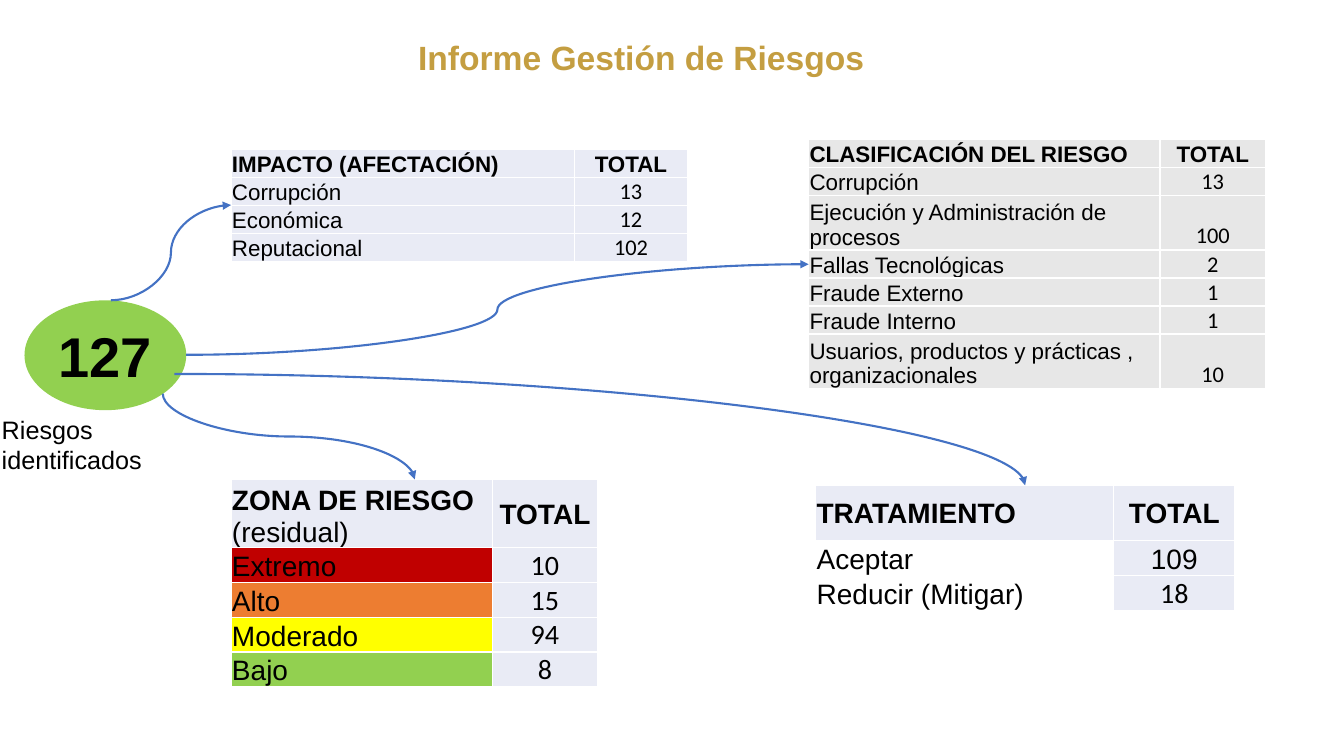
from lxml import etree
from pptx import Presentation
from pptx.dml.color import RGBColor
from pptx.enum.shapes import MSO_CONNECTOR, MSO_SHAPE
from pptx.enum.text import MSO_ANCHOR, MSO_AUTO_SIZE, PP_ALIGN
from pptx.oxml import parse_xml
from pptx.oxml.ns import nsdecls, qn
from pptx.util import Pt

C = {"text": "000000", "title": "C49E41", "line": "4472C4", "white": "FFFFFF",
     "lilac": "E9EBF5", "gray": "E7E7E7", "red": "C00000", "orange": "ED7D31",
     "yellow": "FFFF00", "green": "92D050"}


def add_run(p, text, size, font="Arial", color="text", bold=False):
    r = p.add_run()
    r.text = text
    r.font.size = Pt(size)
    r.font.name = font
    r.font.bold = bold
    r.font.color.rgb = RGBColor.from_string(C[color])


prs = Presentation()
prs.slide_width, prs.slide_height = Pt(960), Pt(540)
s = prs.slides.add_slide(prs.slide_layouts[6])

sp = s.shapes.add_shape(MSO_SHAPE.OVAL, Pt(17.5), Pt(214.5), Pt(115.5), Pt(78.5))
sp.shadow.inherit = False
sp.fill.solid()
sp.fill.fore_color.rgb = RGBColor.from_string(C["green"])
sp.line.fill.background()
tf = sp.text_frame
tf.word_wrap = False
tf.vertical_anchor = MSO_ANCHOR.MIDDLE
p = tf.paragraphs[0]
p.alignment = PP_ALIGN.CENTER
add_run(p, "127", 40, bold=True)

labels = [
    (-5.8, 292.5, 169, 29, "Riesgos identificados", 18, "text", False),
    (291.6, 23, 352, 36, "Informe Gestión de Riesgos", 24, "title", True),
]
for x, y, w, h, text, size, color, bold in labels:
    tf = s.shapes.add_textbox(Pt(x), Pt(y), Pt(w), Pt(h)).text_frame
    tf.word_wrap = True
    tf.auto_size = MSO_AUTO_SIZE.SHAPE_TO_FIT_TEXT
    add_run(tf.paragraphs[0], text, size, color=color, bold=bold)

tables = [
    (165, 106.8, (245.2, 81), (20,) * 4, 16, "lilac", MSO_ANCHOR.BOTTOM,
     ["IMPACTO (AFECTACIÓN)"],
     [("Corrupción", "13", "lilac"), ("Económica", "12", "lilac"),
      ("Reputacional", "102", "lilac")]),
    (577.6, 99.5, (251, 75.4), (20, 20, 39, 20, 20, 20, 39), 16, "gray", MSO_ANCHOR.BOTTOM,
     ["CLASIFICACIÓN DEL RIESGO"],
     [("Corrupción", "13", "gray"),
      ("Ejecución y Administración de procesos", "100", "gray"),
      ("Fallas Tecnológicas", "2", "gray"), ("Fraude Externo", "1", "gray"),
      ("Fraude Interno", "1", "gray"),
      ("Usuarios, productos y prácticas , organizacionales", "10", "gray")]),
    (165, 342.6, (186.6, 75.4), (48.4,) + (24.8,) * 4, 20, "lilac", MSO_ANCHOR.BOTTOM,
     ["ZONA DE RIESGO ", "(residual)"],
     [("Extremo", "10", "red"), ("Alto", "15", "orange"),
      ("Moderado", "94", "yellow"), ("Bajo", "8", "green")]),
    (582.6, 346.6, (213, 86.4), (39.5, 24.9, 24.9), 20, "lilac", MSO_ANCHOR.MIDDLE,
     ["TRATAMIENTO"],
     [("Aceptar", "109", None), ("Reducir (Mitigar)", "18", None)]),
]
for x, y, widths, heights, size, base, head_anchor, head, body in tables:
    tbl = s.shapes.add_table(len(heights), 2, Pt(x), Pt(y),
                             Pt(sum(widths)), Pt(sum(heights))).table
    tbl.first_row = tbl.horz_banding = False
    for col, w in zip(tbl.columns, widths):
        col.width = Pt(w)
    for row, h in zip(tbl.rows, heights):
        row.height = Pt(h)
    rows = [(head, "TOTAL", base)] + [([name], n, fill) for name, n, fill in body]
    for i, (names, total, name_fill) in enumerate(rows):
        for j, (texts, fill) in enumerate([(names, name_fill), ([total], base)]):
            cell = tbl.cell(i, j)
            cell.margin_left = cell.margin_right = cell.margin_top = Pt(0.72)
            cell.margin_bottom = 0
            cell.vertical_anchor = MSO_ANCHOR.BOTTOM
            if i == 0:
                cell.vertical_anchor = MSO_ANCHOR.MIDDLE if j and size == 20 else head_anchor
            for side in "LRTB":
                cell._tc.get_or_add_tcPr().append(parse_xml(
                    f'<a:ln{side} {nsdecls("a")} w="12700"><a:solidFill>'
                    f'<a:srgbClr val="{C["white"]}"/></a:solidFill></a:ln{side}>'))
            if fill:
                cell.fill.solid()
                cell.fill.fore_color.rgb = RGBColor.from_string(C[fill])
            else:
                cell.fill.background()
            p = cell.text_frame.paragraphs[0]
            if j:
                p.alignment = PP_ALIGN.CENTER
            font = "Calibri" if i and j and total != "109" else "Arial"
            for k, text in enumerate(texts):
                add_run(p, text, size, font, bold=i == 0 and k == 0)

arrows = [
    (79.2, 214.5, 165, 146.5, 0, "curvedConnector3"),
    (133, 253.5, 577.6, 188.8, 0, "curvedConnector3"),
    (236.9, 221.8, 175.7, 401.8, 270, "curvedConnector3"),
    (124.6, 267.1, 732.2, 346.6, 0, "curvedConnector2"),
]
for x1, y1, x2, y2, angle, preset in arrows:
    cn = s.shapes.add_connector(MSO_CONNECTOR.CURVE, Pt(x1), Pt(y1), Pt(x2), Pt(y2))
    cn.line.color.rgb = RGBColor.from_string(C["line"])
    cn.line.width = Pt(1.5)
    spPr = cn._element.spPr
    spPr.find(qn("a:prstGeom")).set("prst", preset)
    if angle:
        spPr.find(qn("a:xfrm")).set("rot", str(angle * 60000))
    etree.SubElement(spPr.find(qn("a:ln")), qn("a:tailEnd"), type="triangle")
    etree.SubElement(spPr, qn("a:effectLst"))

prs.save("out.pptx")
